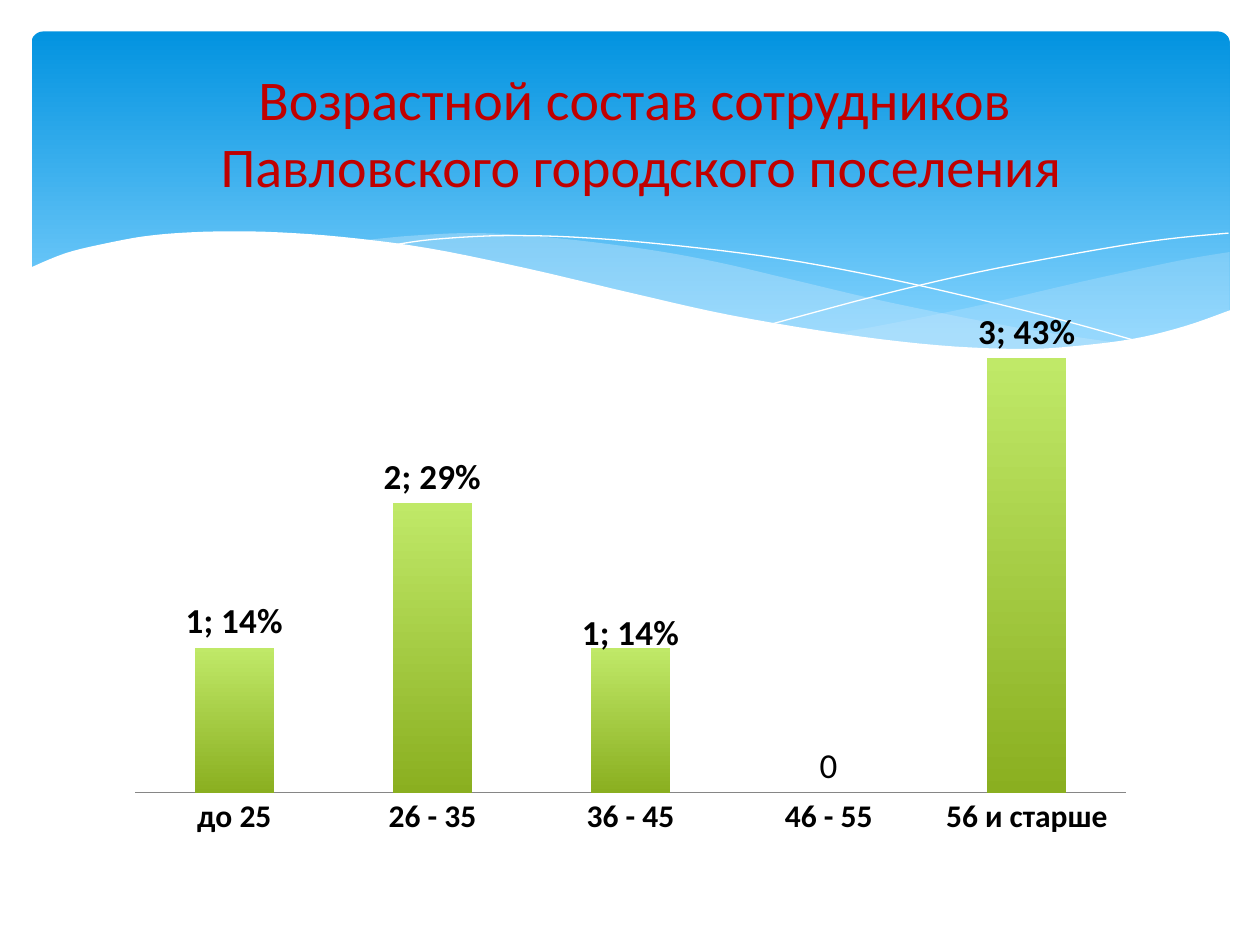
from dataclasses import dataclass

from lxml import etree
from pptx import Presentation
from pptx.chart.data import CategoryChartData
from pptx.dml.color import RGBColor
from pptx.enum import chart as ch, shapes, text
from pptx.oxml import parse_xml
from pptx.oxml.ns import qn
from pptx.util import Inches, Pt

CHART_NS = "http://schemas.openxmlformats.org/drawingml/2006/chart"


@dataclass(frozen=True)
class Theme:
    font: str = "Calibri"
    title: str = "C00000"
    ink: str = "000000"
    paper: str = "FFFFFF"
    wave: str = "C6E7FC"
    axis: str = "868686"
    sky: tuple = ("0293E0", "83D3FE")
    bar: tuple = ("C0E968", "8AAF20")
    title_size: int = 32
    label_size: int = 20
    axis_size: int = 18


THEME = Theme()

# Knots of the wave outlines, in inches
RIGHT_WAVE_TOP = [(9.76, 2), (9.35, 2.07), (8.61, 2.23), (7.79, 2.42), (7.06, 2.57), (6.61, 2.65)]
RIGHT_WAVE_BOTTOM = [(6.61, 2.65), (7.05, 2.71), (7.57, 2.76), (8.03, 2.78), (8.54, 2.76),
                     (8.97, 2.7), (9.35, 2.62), (9.76, 2.47)]
LONG_WAVE_TOP = [(8.93, 2.73), (8.07, 2.6), (7.06, 2.4), (6.29, 2.22), (5.69, 2.08), (5.14, 1.98),
                 (4.42, 1.89), (3.8, 1.85), (3.28, 1.87), (2.86, 1.91)]
LONG_WAVE_BOTTOM = [(2.86, 1.91), (3.42, 1.99), (4.04, 2.11), (4.91, 2.32), (5.66, 2.48),
                    (6.34, 2.61), (6.95, 2.7), (7.48, 2.76), (8.07, 2.78), (8.57, 2.77), (8.93, 2.73)]
FALLING_LINE = [(3.09, 1.95), (3.44, 1.9), (4.01, 1.87), (4.69, 1.89), (5.56, 1.97), (6.36, 2.08),
                (7.27, 2.26), (8.31, 2.51), (9.07, 2.72)]
RISING_LINE = [(6.13, 2.57), (6.95, 2.35), (7.76, 2.16), (8.66, 1.99), (9.24, 1.9), (9.75, 1.85)]
PAPER_EDGE = [(9.77, 2.46), (9.4, 2.59), (8.99, 2.69), (8.5, 2.75), (8.09, 2.77), (7.44, 2.74),
              (6.68, 2.65), (5.79, 2.5), (5.03, 2.33), (4.18, 2.13), (3.4, 1.97), (2.71, 1.88),
              (2.11, 1.84), (1.61, 1.84), (1.19, 1.87), (0.85, 1.93), (0.52, 2.01), (0.23, 2.13)]


def rgb(value):
    return RGBColor.from_string(value)


def format_font(font, *, size, color=THEME.ink, bold=False):
    font.name, font.size, font.bold = THEME.font, Pt(size), bold
    font.color.rgb = rgb(color)


def fill_downwards(fill, colors, end=1.0):
    """Fill with a gradient from the first colour at the top to the second."""
    fill.gradient()
    fill.gradient_angle = 270
    for stop, color, position in zip(fill.gradient_stops, colors, (0, end)):
        stop.color.rgb = rgb(color)
        stop.position = position


def smooth(knots, steps=5):
    """Return points on a Catmull-Rom curve through the knots."""
    padded = [knots[0], *knots, knots[-1]]
    points = [knots[0]]
    for quad in zip(padded, padded[1:], padded[2:], padded[3:]):
        for step in range(1, steps + 1):
            t = step / steps
            points.append(tuple(
                (2 * b + (c - a) * t + (2 * a - 5 * b + 4 * c - d) * t ** 2
                 + (3 * b - a - 3 * c + d) * t ** 3) / 2
                for a, b, c, d in zip(*quad)))
    return points


def add_outline(slide, points, *, fill=None, opacity=100, line=None):
    start, *rest = [(Inches(x), Inches(y)) for x, y in points]
    builder = slide.shapes.build_freeform(*start)
    builder.add_line_segments(rest, close=fill is not None)
    outline = builder.convert_to_shape()
    outline.shadow.inherit = False
    if fill:
        outline.fill.solid()
        outline.fill.fore_color.rgb = rgb(fill)
        if opacity < 100:
            color = outline.fill._xPr.find(qn("a:solidFill"))[0]
            etree.SubElement(color, qn("a:alpha"), val=str(opacity * 1000))
    else:
        outline.fill.background()
    if line:
        outline.line.color.rgb = rgb(line)
        outline.line.width = 0
    else:
        outline.line.fill.background()


def add_banner(slide):
    sky = slide.shapes.add_shape(shapes.MSO_SHAPE.ROUNDED_RECTANGLE, Inches(0.25), Inches(0.25),
                                 Inches(9.51), Inches(2.7))
    sky.adjustments[0] = 0.034
    sky.shadow.inherit = False
    sky.line.fill.background()
    fill_downwards(sky.fill, THEME.sky, end=0.9)
    add_outline(slide, smooth(RIGHT_WAVE_TOP) + smooth(RIGHT_WAVE_BOTTOM),
                fill=THEME.wave, opacity=29)
    add_outline(slide, smooth(LONG_WAVE_TOP) + smooth(LONG_WAVE_BOTTOM),
                fill=THEME.wave, opacity=40)
    for knots in (FALLING_LINE, RISING_LINE):
        add_outline(slide, smooth(knots), line=THEME.paper)
    add_outline(slide, smooth(PAPER_EDGE) + [(0.23, 3.29), (9.77, 3.29)], fill=THEME.paper)


def layout_xml(**values):
    parts = "".join(f'<c:{name} val="{value}"/>' for name, value in values.items())
    return parse_xml(f'<c:layout xmlns:c="{CHART_NS}"><c:manualLayout>{parts}'
                     '</c:manualLayout></c:layout>')


def label_bar(series, index, wording, drop=0):
    """Give one bar its own label, lowered by a share of the chart's height."""
    label = series.points[index].data_label
    run = label.text_frame.paragraphs[0].add_run()
    run.text = wording
    format_font(run.font, size=THEME.label_size, bold=True)
    label.position = ch.XL_LABEL_POSITION.OUTSIDE_END
    if drop:
        entry = series.data_labels._element.findall(qn("c:dLbl"))[-1]
        entry.find(qn("c:idx")).addnext(layout_xml(x=0, y=drop))


def add_age_chart(slide):
    ages = CategoryChartData()
    ages.categories = ["до 25", "26 - 35", "36 - 45", "46 - 55", "56 и старше"]
    ages.add_series("Series 1", [1, 2, 1, 0, 3])
    chart = slide.shapes.add_chart(ch.XL_CHART_TYPE.COLUMN_CLUSTERED, Inches(0.91), Inches(2.18),
                                   Inches(8.19), Inches(4.57), ages).chart
    format_font(chart.font, size=THEME.axis_size)
    chart.has_legend = chart.has_title = False

    plot = chart.plots[0]
    plot.gap_width, plot.overlap, plot.vary_by_categories = 150, -25, False
    plot_area = chart._chartSpace.chart.plotArea
    for automatic in plot_area.findall(qn("c:layout")):
        plot_area.remove(automatic)
    plot_area.insert(0, layout_xml(layoutTarget="inner", xMode="edge", yMode="edge",
                                   x=0.02, y=0.02, w=0.96, h=0.88))

    values = chart.value_axis
    values.minimum_scale, values.maximum_scale = 0, 3.5
    values.has_major_gridlines = values.visible = False
    categories = chart.category_axis
    categories.major_tick_mark = ch.XL_TICK_MARK.NONE
    categories.format.line.color.rgb = rgb(THEME.axis)
    format_font(categories.tick_labels.font, size=THEME.axis_size, bold=True)

    series = plot.series[0]
    fill_downwards(series.format.fill, THEME.bar)
    labels = series.data_labels
    labels.show_value = True
    labels.position = ch.XL_LABEL_POSITION.OUTSIDE_END
    format_font(labels.font, size=THEME.label_size)
    label_bar(series, 0, "1; 14%")
    label_bar(series, 1, "2; 29%")
    label_bar(series, 2, "1; 14%", drop=0.02)
    label_bar(series, 4, "3; 43%")


def add_title(slide, lines):
    frame = slide.shapes.add_textbox(Inches(0.59), Inches(0.36), Inches(9), Inches(1.37)).text_frame
    frame.word_wrap = True
    frame.vertical_anchor = text.MSO_ANCHOR.MIDDLE
    paragraph = frame.paragraphs[0]
    paragraph.alignment = text.PP_ALIGN.CENTER
    paragraph.text = "\v".join(lines)
    for run in paragraph.runs:
        format_font(run.font, size=THEME.title_size, color=THEME.title)


def main():
    deck = Presentation()
    deck.slide_width, deck.slide_height = Inches(10), Inches(7.5)
    slide = deck.slides.add_slide(deck.slide_layouts[6])
    add_banner(slide)
    add_age_chart(slide)
    add_title(slide, ["Возрастной состав сотрудников ", "Павловского городского поселения"])
    deck.save("out.pptx")


if __name__ == "__main__":
    main()
